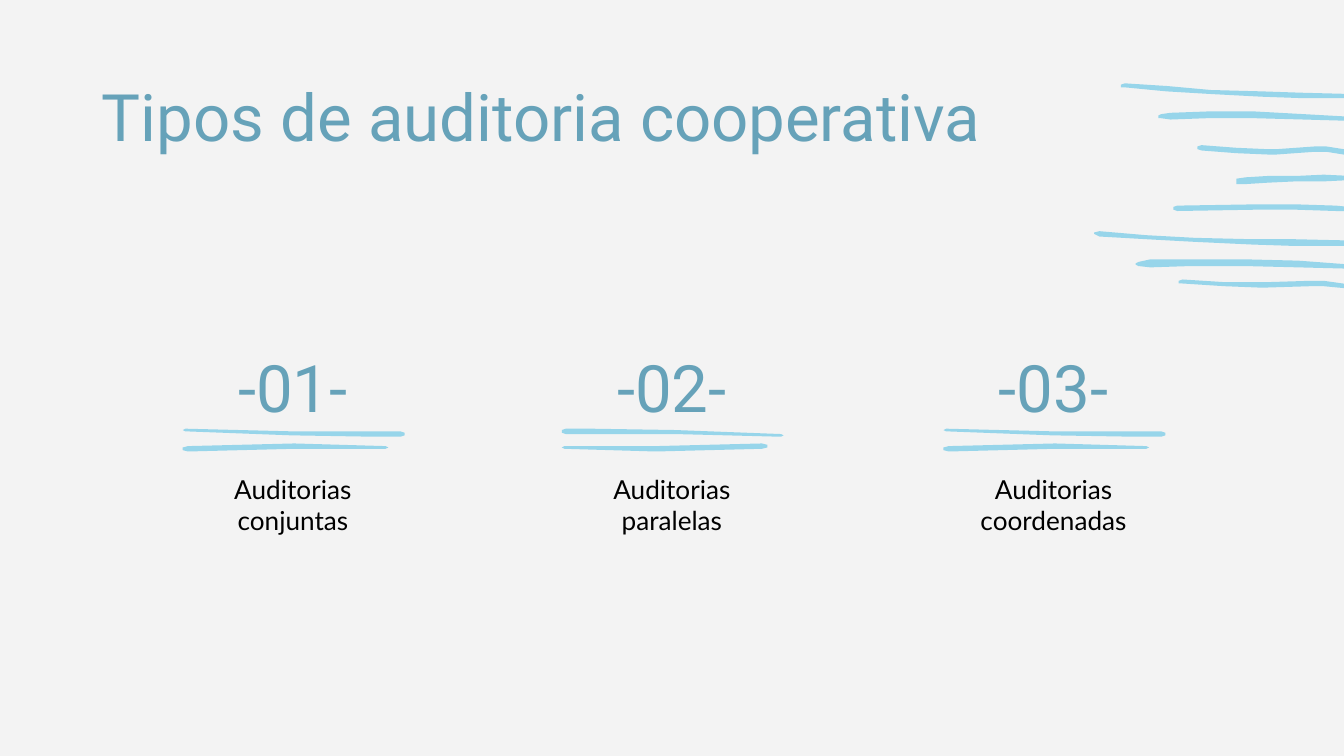
from pptx import Presentation
from pptx.dml.color import RGBColor
from pptx.enum.text import MSO_ANCHOR, PP_ALIGN
from pptx.util import Pt

PX = 9144  # EMU per px, 100 px to the inch
BACKGROUND = RGBColor(0xF3, 0xF3, 0xF3)
SKY = RGBColor(0x97, 0xD5, 0xEA)
TEAL = RGBColor(0x66, 0xA2, 0xB9)
BLACK = RGBColor(0x00, 0x00, 0x00)

HEADING = {"name": "Roboto", "size": Pt(35)}
LABEL = {"name": "Lato", "size": Pt(14)}

# Each brush stroke is a row of (x, top, bottom) stations from left to right.
CORNER_STROKES = [
    [(834, 63, 65), (837, 62, 65), (868, 64, 68), (901, 67, 70),
     (939, 68, 72), (968, 69, 73), (1006, 70, 73)],
    [(862, 86, 88), (864, 85, 88), (871, 84, 89), (898, 83, 88),
     (934, 83, 88), (970, 85, 89), (1006, 87, 90)],
    [(891, 109, 111), (894, 108, 112), (920, 110, 114), (943, 111, 115),
     (950, 111, 115), (978, 109, 113), (987, 109, 113), (1006, 112, 116)],
    [(920, 133, 137), (927, 132, 137), (943, 131, 136), (964, 131, 135),
     (985, 130, 135), (1006, 131, 134)],
    [(873, 154, 156), (876, 153, 157), (937, 152, 156), (963, 152, 156),
     (994, 153, 157), (1004, 154, 157)],
    [(814, 173, 174), (818, 172, 176), (853, 175, 178), (889, 177, 180),
     (932, 178, 182), (963, 178, 183), (1006, 179, 183)],
    [(845, 196, 197), (847, 195, 198), (856, 193, 199), (886, 193, 198),
     (926, 193, 198), (966, 194, 199), (1006, 197, 200)],
    [(877, 209, 211), (880, 208, 211), (911, 210, 213), (936, 210, 214),
     (943, 210, 214), (975, 209, 213), (985, 209, 213), (1006, 212, 215)],
]
STROKE_H = 6
UNDERLINES = [  # top on the slide, stations within the stroke's own box
    (319, [(0, 1, 1), (2, 0, 2), (81, 2, 5), (143, 2, 6), (162, 2, 6), (165, 3, 5)]),
    (330, [(0, 3, 5), (4, 2, 6), (83, 0, 4), (151, 2, 4), (153, 3, 3)]),
]
COLUMNS = [  # centre, number, label, underlines turned by half a circle
    (218, "-01-", "Auditorias conjuntas", False),
    (500, "-02-", "Auditorias paralelas", True),
    (784, "-03-", "Auditorias coordenadas", False),
]

prs = Presentation()
prs.slide_width = 1000 * PX
prs.slide_height = prs.slide_width * 9 // 16
s = prs.slides.add_slide(prs.slide_layouts[6])
s.background.fill.solid()
s.background.fill.fore_color.rgb = BACKGROUND


def add_stroke(stations):
    """Draw the closed outline along the tops and back along the bottoms."""
    outline = [(x, top) for x, top, _ in stations]
    outline += [(x, bottom) for x, _, bottom in reversed(stations)]
    builder = s.shapes.build_freeform(*outline[0], scale=PX)
    builder.add_line_segments(outline[1:], close=True)
    sp = builder.convert_to_shape()
    sp.shadow.inherit = False
    sp.fill.solid()
    sp.fill.fore_color.rgb = SKY
    sp.line.fill.background()


def add_text(text, x, y, w, h, font, color, align=PP_ALIGN.CENTER):
    tf = s.shapes.add_textbox(x * PX, y * PX, w * PX, h * PX).text_frame
    tf.word_wrap = True
    tf.vertical_anchor = MSO_ANCHOR.TOP
    for side in ("left", "top", "right", "bottom"):
        setattr(tf, f"margin_{side}", 10 * PX)
    p = tf.paragraphs[0]
    p.alignment = align
    r = p.add_run()
    r.text = text
    for key, value in font.items():
        setattr(r.font, key, value)
    r.font.color.rgb = color


for stations in CORNER_STROKES:
    add_stroke(stations)

add_text("Tipos de auditoria cooperativa", 66, 47, 853, 80, HEADING, TEAL, PP_ALIGN.LEFT)

for centre, number, label, turned in COLUMNS:
    add_text(number, centre - 82, 248, 164, 60, HEADING, TEAL)
    add_text(label, centre - 88, 342, 176, 91, LABEL, BLACK)
    for y, stations in UNDERLINES:
        if turned:
            width = stations[-1][0]
            stations = [(width - x, STROKE_H - bottom, STROKE_H - top)
                        for x, top, bottom in reversed(stations)]
        add_stroke([(centre - 82 + x, y + top, y + bottom) for x, top, bottom in stations])

prs.save("out.pptx")
